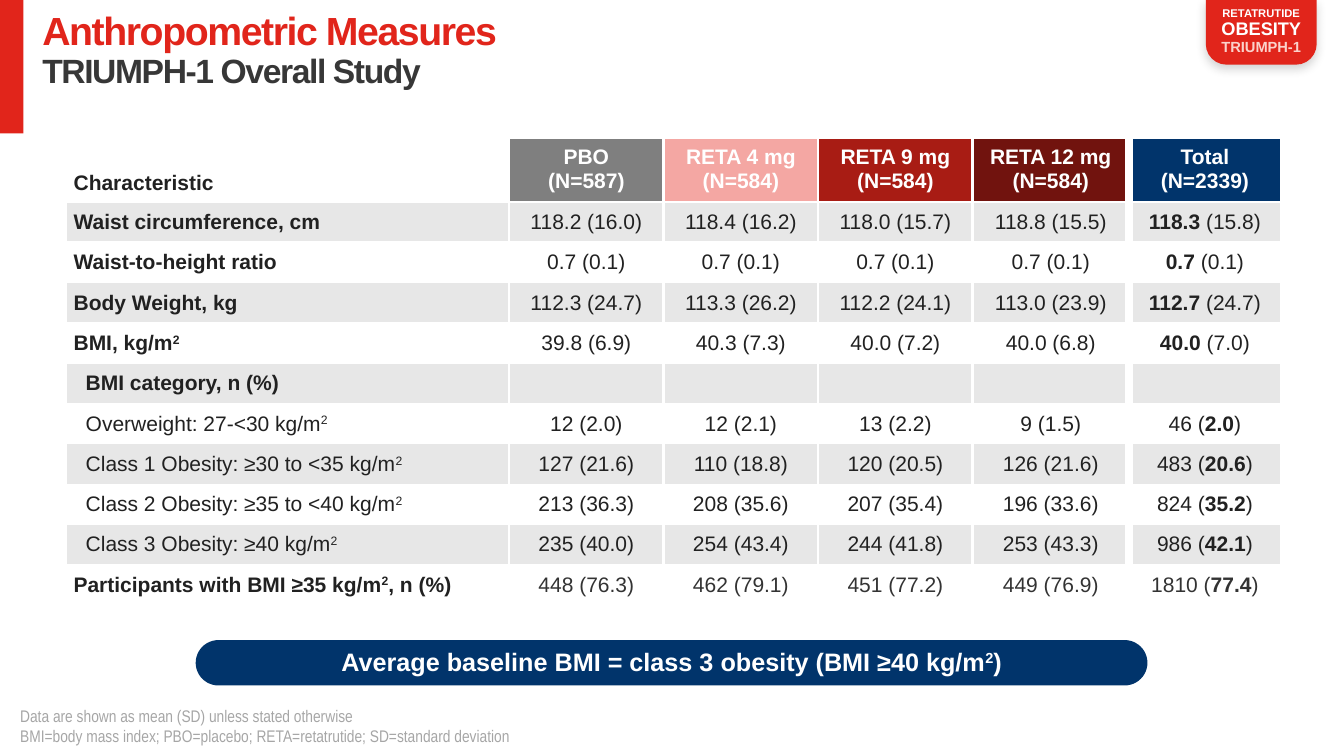
from dataclasses import dataclass

from lxml import etree
from pptx import Presentation, util as u
from pptx.dml.color import RGBColor
from pptx.enum import shapes, text
from pptx.oxml import ns


@dataclass(frozen=True)
class Theme:
    """Colours, fonts and type sizes of the slide."""

    red: str = "E1251B"
    navy: str = "01346B"
    white: str = "FFFFFF"
    ink: str = "212121"
    soft_ink: str = "333333"
    subtitle: str = "373737"
    blush: str = "FBD2CB"
    note: str = "A6A6A6"
    band: str = "E7E7E7"
    arms: tuple = ("FFFFFF", "7F7F7F", "F4A7A3", "A81C14", "71130E", "01346B")
    font: str = "Arial"
    narrow: str = "Arial Narrow"
    badge_sizes: tuple = (8, 13, 10.5)
    title_size: float = 28
    subtitle_size: float = 24
    table_size: float = 15
    banner_size: float = 18
    note_size: float = 12
    thin: float = 2.25
    thick: float = 6


class SlideBuilder:
    """Draws elements on a grid of 160 columns and 90 rows."""

    def __init__(self, presentation, theme):
        self.theme = theme
        self.column = presentation.slide_width / 160
        self.row = presentation.slide_height / 90
        self.slide = presentation.slides.add_slide(presentation.slide_layouts[6])

    def place(self, left, top, width, height):
        """Turn grid units into lengths."""
        return [round(value * unit) for value, unit in
                zip((left, top, width, height), (self.column, self.row) * 2)]

    def apply(self, target, **values):
        """Set each named attribute on the target."""
        for name, value in values.items():
            setattr(target, name, value)

    def paint(self, target, colour):
        """Give the target a solid fill."""
        target.fill.solid()
        target.fill.fore_color.rgb = RGBColor.from_string(colour)

    def inset(self, target, left=0, top=0, right=0, bottom=0,
              anchor=text.MSO_ANCHOR.MIDDLE):
        """Set the margins and the anchor of a text frame or a cell."""
        left, top, right, bottom = self.place(left, top, right, bottom)
        self.apply(target, margin_left=left, margin_top=top, margin_right=right,
                   margin_bottom=bottom, vertical_anchor=anchor)

    def add_runs(self, paragraph, content, size, colour, bold=False, font=None,
                 spacing=None):
        """Add runs, where * toggles bold, ^ toggles superscript and a newline breaks."""
        for number, line in enumerate(content.split("\n")):
            if number:
                paragraph.add_line_break()
                mark = etree.SubElement(paragraph._p[-1], ns.qn("a:rPr"))
                mark.set("sz", str(int(size * 100)))
            for switch, part in enumerate(line.split("*")):
                for lift, piece in enumerate(part.split("^")):
                    if not piece:
                        continue
                    run = paragraph.add_run()
                    run.text = piece
                    self.apply(run.font, name=font or self.theme.font,
                               size=u.Pt(size), bold=bold != bool(switch % 2))
                    run.font.color.rgb = RGBColor.from_string(colour)
                    if lift % 2:
                        run.font._element.set("baseline", "30000")
                    if spacing:
                        run.font._element.set("spc", str(spacing))

    def shape(self, kind, place, colour, adjustments=()):
        """Add a filled shape without a line."""
        shape = self.slide.shapes.add_shape(kind, *self.place(*place))
        shape.shadow.inherit = False
        self.paint(shape, colour)
        shape.line.fill.background()
        for index, value in enumerate(adjustments):
            shape.adjustments[index] = value
        shape.text_frame.word_wrap = True
        return shape

    def drop_shadow(self, shape):
        """Add a soft shadow below the shape."""
        effects = shape._element.spPr.find(ns.qn("a:effectLst"))
        shadow = etree.SubElement(effects, ns.qn("a:outerShdw"), blurRad=str(u.Pt(7)),
                                  dist=str(u.Pt(3)), dir="5400000", rotWithShape="0")
        colour = etree.SubElement(shadow, ns.qn("a:srgbClr"), val=self.theme.ink)
        etree.SubElement(colour, ns.qn("a:alpha"), val="20000")

    def text_box(self, place, anchor):
        """Add an empty wrapping text box without margins."""
        frame = self.slide.shapes.add_textbox(*self.place(*place)).text_frame
        frame.word_wrap = True
        self.inset(frame, anchor=anchor)
        return frame

    def borders(self, cell, **widths):
        """Draw white cell borders of the given widths."""
        properties = cell._tc.get_or_add_tcPr()
        for side, width in widths.items():
            line = etree.SubElement(properties, ns.qn(f"a:ln{side}"), w=str(u.Pt(width)))
            fill = etree.SubElement(line, ns.qn("a:solidFill"))
            etree.SubElement(fill, ns.qn("a:srgbClr"), val=self.theme.white)

    def table(self, left, top, widths, heights, rows, indented):
        """Add the banded table with a header row and a set-off last column."""
        theme = self.theme
        place = self.place(left, top, sum(widths), sum(heights))
        table = self.slide.shapes.add_table(len(rows), len(widths), *place).table
        self.apply(table, first_row=False, horz_banding=False)
        for column, width in zip(table.columns, widths):
            column.width = round(width * self.column)
        for row, height in zip(table.rows, heights):
            row.height = round(height * self.row)
        last_row, last_column = len(rows) - 1, len(widths) - 1
        for r, values in enumerate(rows):
            for c, value in enumerate(values):
                cell = table.cell(r, c)
                sides = {"L": theme.thick if c == last_column else theme.thin,
                         "R": theme.thick if c == last_column - 1 else theme.thin}
                if r < 2:
                    sides["T" if r else "B"] = theme.thin
                self.borders(cell, **sides)
                banding = theme.band if r % 2 else theme.white
                self.paint(cell, banding if r else theme.arms[c])
                side = 0.1 if c else 0.96
                anchor = text.MSO_ANCHOR.MIDDLE if r or c else text.MSO_ANCHOR.BOTTOM
                self.inset(cell, side, 0.9 if r else 0.7, 0.1, 0.9, anchor)
                paragraph = cell.text_frame.paragraphs[0]
                if c:
                    paragraph.alignment = text.PP_ALIGN.CENTER
                elif r in indented:
                    margin = str(round(1.44 * self.column))
                    paragraph._p.get_or_add_pPr().set("marL", margin)
                colour = theme.soft_ink if r == last_row and c else theme.ink
                if c and not r:
                    colour = theme.white
                self.add_runs(paragraph, value, theme.table_size, colour, bold=not r)
                if not value:
                    end = paragraph._p.get_or_add_endParaRPr()
                    end.set("sz", str(theme.table_size * 100))


ROWS = [
    ["Characteristic", "PBO\n(N=587)", "RETA 4 mg\n(N=584)", "RETA 9 mg\n(N=584)",
     "RETA 12 mg\n(N=584)", "Total\n(N=2339)"],
    ["*Waist circumference, cm*", "118.2 (16.0)", "118.4 (16.2)", "118.0 (15.7)",
     "118.8 (15.5)", "*118.3* (15.8)"],
    ["*Waist-to-height ratio*"] + ["0.7 (0.1)"] * 4 + ["*0.7* (0.1)"],
    ["*Body Weight, kg*", "112.3 (24.7)", "113.3 (26.2)", "112.2 (24.1)",
     "113.0 (23.9)", "*112.7* (24.7)"],
    ["*BMI, kg/m^2^*", "39.8 (6.9)", "40.3 (7.3)", "40.0 (7.2)", "40.0 (6.8)",
     "*40.0* (7.0)"],
    ["*BMI category, n (%)*"] + [""] * 5,
    ["Overweight: 27-<30 kg/m^2^", "12 (2.0)", "12 (2.1)", "13 (2.2)", "9 (1.5)",
     "46 (*2.0*)"],
    ["Class 1 Obesity: ≥30 to <35 kg/m^2^", "127 (21.6)", "110 (18.8)", "120 (20.5)",
     "126 (21.6)", "483 (*20.6*)"],
    ["Class 2 Obesity: ≥35 to <40 kg/m^2^", "213 (36.3)", "208 (35.6)", "207 (35.4)",
     "196 (33.6)", "824 (*35.2*)"],
    ["Class 3 Obesity: ≥40 kg/m^2^", "235 (40.0)", "254 (43.4)", "244 (41.8)",
     "253 (43.3)", "986 (*42.1*)"],
    ["*Participants with BMI ≥35 kg/m^2^, n (%)*", "448 (76.3)", "462 (79.1)",
     "451 (77.2)", "449 (76.9)", "1810 (*77.4*)"],
]


def main():
    """Build the slide and save it."""
    presentation = Presentation()
    presentation.slide_width, presentation.slide_height = u.Inches(13.33), u.Inches(7.5)
    theme = Theme()
    builder = SlideBuilder(presentation, theme)
    kinds = shapes.MSO_SHAPE

    builder.shape(kinds.RECTANGLE, (0, 0, 2.8, 15.9), theme.red)
    badge = builder.shape(kinds.ROUND_2_SAME_RECTANGLE, (143.55, 0, 13.2, 7.7),
                          theme.red, (0, 0.32))
    builder.drop_shadow(badge)
    builder.inset(badge.text_frame, 0.96, 1.2, 0.96, 0.7)
    labels = ("RETATRUTIDE", "OBESITY", "TRIUMPH-1")
    colours = (theme.white, theme.white, theme.blush)
    for index, label in enumerate(labels):
        frame = badge.text_frame
        paragraph = frame.add_paragraph() if index else frame.paragraphs[0]
        builder.apply(paragraph, alignment=text.PP_ALIGN.CENTER, line_spacing=0.9)
        builder.add_runs(paragraph, label, theme.badge_sizes[index], colours[index], True)

    title = builder.text_box((5.04, 1.44, 130, 9.5), text.MSO_ANCHOR.TOP).paragraphs[0]
    title.line_spacing = 0.9
    builder.add_runs(title, "Anthropometric Measures\n", theme.title_size, theme.red,
                     True, spacing=-100)
    builder.add_runs(title, "TRIUMPH-1 Overall Study", theme.subtitle_size,
                     theme.subtitle, True, spacing=-100)

    builder.table(7.8, 16.44, [52.8] + [18.4] * 3 + [18.6, 18.1], [7.3] + [4.7] * 10,
                  ROWS, range(5, 10))

    notes = builder.text_box((2.4, 84, 150, 4.8), text.MSO_ANCHOR.BOTTOM)
    lines = ("Data are shown as mean (SD) unless stated otherwise",
             "BMI=body mass index; PBO=placebo; RETA=retatrutide; SD=standard deviation")
    for index, line in enumerate(lines):
        paragraph = notes.add_paragraph() if index else notes.paragraphs[0]
        builder.add_runs(paragraph, line, theme.note_size, theme.note, font=theme.narrow)

    banner = builder.shape(kinds.ROUNDED_RECTANGLE, (23.3, 76.2, 113.3, 5.4),
                           theme.navy, (0.5,))
    builder.inset(banner.text_frame, 1.2, 0, 1.2, 0.36)
    message = banner.text_frame.paragraphs[0]
    message.alignment = text.PP_ALIGN.CENTER
    builder.add_runs(message, "Average baseline BMI = class 3 obesity (BMI ≥40 kg/m^2^)",
                     theme.banner_size, theme.white, True)

    presentation.save("out.pptx")


if __name__ == "__main__":
    main()
